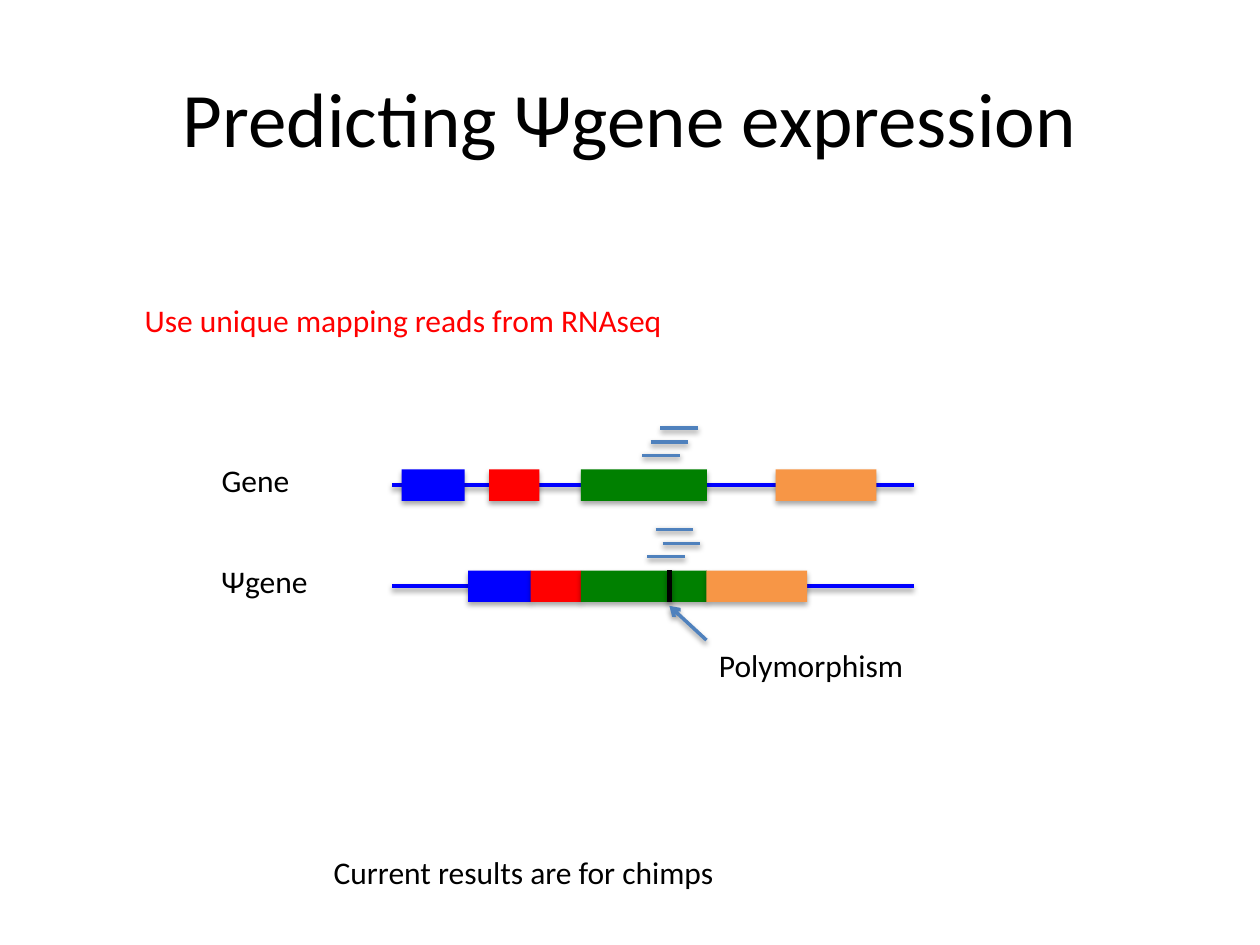
from dataclasses import dataclass

from lxml import etree
from pptx import Presentation
from pptx.dml.color import RGBColor
from pptx.enum import shapes, text
from pptx.oxml import parse_xml
from pptx.oxml.ns import nsdecls, qn
from pptx.util import Pt


@dataclass(frozen=True)
class Theme:
    font: str = "Calibri"
    title: float = 44
    body: float = 18
    ink: str = "000000"
    blue: str = "0000FF"
    red: str = "FF0000"
    green: str = "008000"
    orange: str = "F79646"
    read: str = "4F81BD"


@dataclass(frozen=True)
class Exon:
    left: float
    width: float
    color: str


@dataclass(frozen=True)
class Track:
    name: str
    width: float
    mid: float
    exons: tuple[Exon, ...]
    reads: tuple[float, ...]  # left ends, from the lowest read up


T = Theme()
START, END = 224, 522
EXON_H = 18
READ_W = 21.6
READ_UP = (17, 24.5, 32.5)  # heights of the reads above the track
MARK = 382.5

TRACKS = (
    Track("Gene", 54, 277.2,
          (Exon(229.5, 36, T.blue), Exon(279.5, 28.8, T.red),
           Exon(332, 72, T.green), Exon(443.3, 57.6, T.orange)),
          (367, 371.8, 377.3)),
    Track("Ψgene", 64, 335,
          (Exon(267.5, 36, T.blue), Exon(303.3, 28.8, T.red),
           Exon(332, 72, T.green), Exon(403.7, 57.6, T.orange)),
          (369.9, 378.7, 374.6)),
)


def shade(shape, alpha: int, dist: float) -> None:
    """Give the shape a soft shadow straight below it."""
    shape.element.spPr.append(parse_xml(
        f'<a:effectLst {nsdecls("a")}>'
        f'<a:outerShdw blurRad="{Pt(3.1)}" dist="{Pt(dist)}" dir="5400000" rotWithShape="0">'
        f'<a:srgbClr val="000000"><a:alpha val="{alpha * 1000}"/></a:srgbClr>'
        '</a:outerShdw></a:effectLst>'))


def rule(slide, x1: float, y1: float, x2: float, y2: float,
         color: str, width: float = 2, arrow: bool = False) -> None:
    line = slide.shapes.add_connector(
        shapes.MSO_CONNECTOR.STRAIGHT, Pt(x1), Pt(y1), Pt(x2), Pt(y2))
    line.line.color.rgb = RGBColor.from_string(color)
    line.line.width = Pt(width)
    if arrow:
        etree.SubElement(line.element.spPr.find(qn("a:ln")), qn("a:tailEnd"), type="arrow")
    shade(line, 38, 1.6)


def block(slide, exon: Exon, top: float) -> None:
    box = slide.shapes.add_shape(
        shapes.MSO_SHAPE.RECTANGLE, Pt(exon.left), Pt(top), Pt(exon.width), Pt(EXON_H))
    box.fill.solid()
    box.fill.fore_color.rgb = RGBColor.from_string(exon.color)
    box.line.fill.background()
    shade(box, 35, 1.8)


def write(slide, words: str, left: float, top: float, width: float, *,
          height: float = 29, size: float = T.body, color: str = T.ink,
          title: bool = False) -> None:
    box = slide.shapes.add_textbox(Pt(left), Pt(top), Pt(width), Pt(height))
    frame = box.text_frame
    frame.word_wrap = title
    frame.auto_size = (text.MSO_AUTO_SIZE.NONE if title
                       else text.MSO_AUTO_SIZE.SHAPE_TO_FIT_TEXT)
    frame.vertical_anchor = text.MSO_ANCHOR.MIDDLE if title else text.MSO_ANCHOR.TOP
    para = frame.paragraphs[0]
    para.alignment = text.PP_ALIGN.CENTER if title else text.PP_ALIGN.LEFT
    run = para.add_run()
    run.text = words
    run.font.name = T.font
    run.font.size = Pt(size)
    run.font.color.rgb = RGBColor.from_string(color)


def draw(slide, track: Track) -> None:
    """Draw a track: its line, exons, name and mapped reads."""
    rule(slide, START, track.mid, END, track.mid, T.blue)
    for exon in track.exons:
        block(slide, exon, track.mid - EXON_H / 2)
    write(slide, track.name, 119.5, track.mid - 17.2, track.width)
    for left, up in zip(track.reads, READ_UP):
        rule(slide, left, track.mid - up, left + READ_W, track.mid - up, T.read)


def main() -> None:
    deck = Presentation()
    deck.slide_width, deck.slide_height = Pt(720), Pt(540)
    slide = deck.slides.add_slide(deck.slide_layouts[6])

    write(slide, "Predicting Ψgene expression", 36, 21.6, 648,
          height=90, size=T.title, title=True)
    write(slide, "Use unique mapping reads from RNAseq", 75.6, 168.5, 313, color=T.red)
    for track in TRACKS:
        draw(slide, track)

    mid = TRACKS[1].mid
    rule(slide, MARK, mid - EXON_H / 2, MARK, mid + EXON_H / 2, T.ink, width=3)
    write(slide, "Polymorphism", 403.7, 365.8, 121)
    rule(slide, 403.7, 365.8, MARK, 346.2, T.read, arrow=True)
    write(slide, "Current results are for chimps", 183.6, 484, 234)
    deck.save("out.pptx")


if __name__ == "__main__":
    main()
